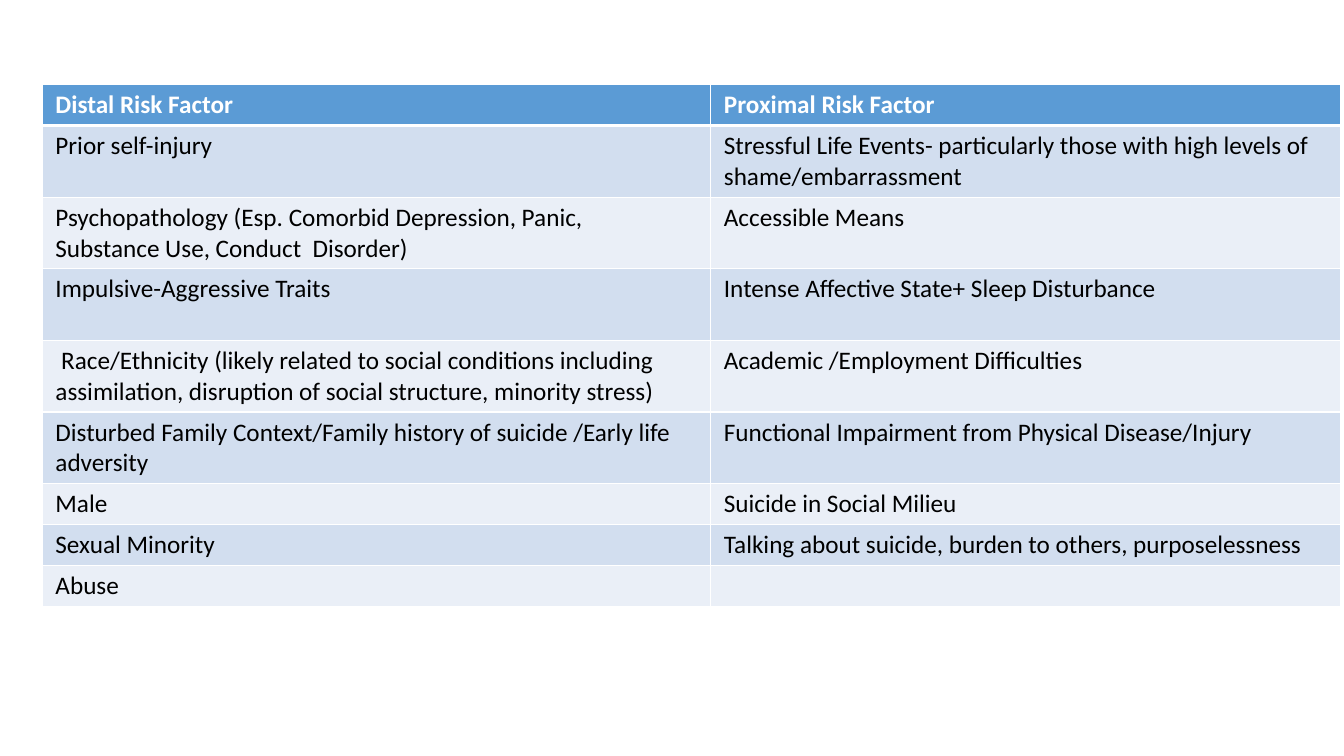
import pptx
import pptx.util
import pptx.dml.color
import pptx.oxml
import pptx.oxml.ns

COLORS = {
    "header": "5B9BD5",
    "odd": "D2DEEF",
    "even": "EAEFF7",
    "white": "FFFFFF",
    "text": "000000",
}
FACTORS = [
    ("Distal Risk Factor", "Proximal Risk Factor"),
    ("Prior self-injury",
     "Stressful Life Events- particularly those with high levels of shame/embarrassment"),
    ("Psychopathology (Esp. Comorbid Depression, Panic,  Substance Use, Conduct  Disorder)",
     "Accessible Means"),
    ("Impulsive-Aggressive Traits", "Intense Affective State+ Sleep Disturbance"),
    (" Race/Ethnicity (likely related to social conditions including assimilation, "
     "disruption of social structure, minority stress)",
     "Academic /Employment Difficulties"),
    ("Disturbed Family Context/Family history of suicide /Early life adversity",
     "Functional Impairment from Physical Disease/Injury"),
    ("Male", "Suicide in Social Milieu"),
    ("Sexual Minority", "Talking about suicide, burden to others, purposelessness"),
    ("Abuse", ""),
]
COLUMNS = [6.63, 6.25]
SINGLE, DOUBLE = 0.4, 0.71
ROWS = [SINGLE] + [DOUBLE] * 5 + [SINGLE] * 3


def set_border(cell, side, width):
    cell._tc.get_or_add_tcPr().append(pptx.oxml.parse_xml(
        f'<a:{side} {pptx.oxml.ns.nsdecls("a")} w="{pptx.util.Pt(width)}">'
        f'<a:solidFill><a:srgbClr val="{COLORS["white"]}"/></a:solidFill></a:{side}>'))


prs = pptx.Presentation()
prs.slide_width = pptx.util.Inches(13.33)
prs.slide_height = pptx.util.Inches(7.5)
slide = prs.slides.add_slide(prs.slide_layouts[6])

table = slide.shapes.add_table(
    len(ROWS), len(COLUMNS),
    pptx.util.Inches(0.42), pptx.util.Inches(0.84),
    pptx.util.Inches(sum(COLUMNS)), pptx.util.Inches(sum(ROWS))).table
for col, width in zip(table.columns, COLUMNS):
    col.width = pptx.util.Inches(width)

for i, (height, factors) in enumerate(zip(ROWS, FACTORS)):
    table.rows[i].height = pptx.util.Inches(height)
    header = i == 0
    fill = "header" if header else "odd" if i % 2 else "even"
    for j, text in enumerate(factors):
        cell = table.cell(i, j)
        cell.margin_left = cell.margin_right = pptx.util.Inches(0.13)
        cell.margin_top = cell.margin_bottom = pptx.util.Inches(0.05)
        set_border(cell, "lnL", 1)
        set_border(cell, "lnR", 1)
        set_border(cell, "lnT", 3 if i == 1 else 1)
        set_border(cell, "lnB", 3 if header else 1)
        cell.fill.solid()
        cell.fill.fore_color.rgb = pptx.dml.color.RGBColor.from_string(COLORS[fill])
        p = cell.text_frame.paragraphs[0]
        if text:
            r = p.add_run()
            r.text = text
            r.font.name = "Calibri"
            r.font.size = pptx.util.Pt(18)
            r.font.bold = header
            r.font.color.rgb = pptx.dml.color.RGBColor.from_string(
                COLORS["white" if header else "text"])

prs.save("out.pptx")
